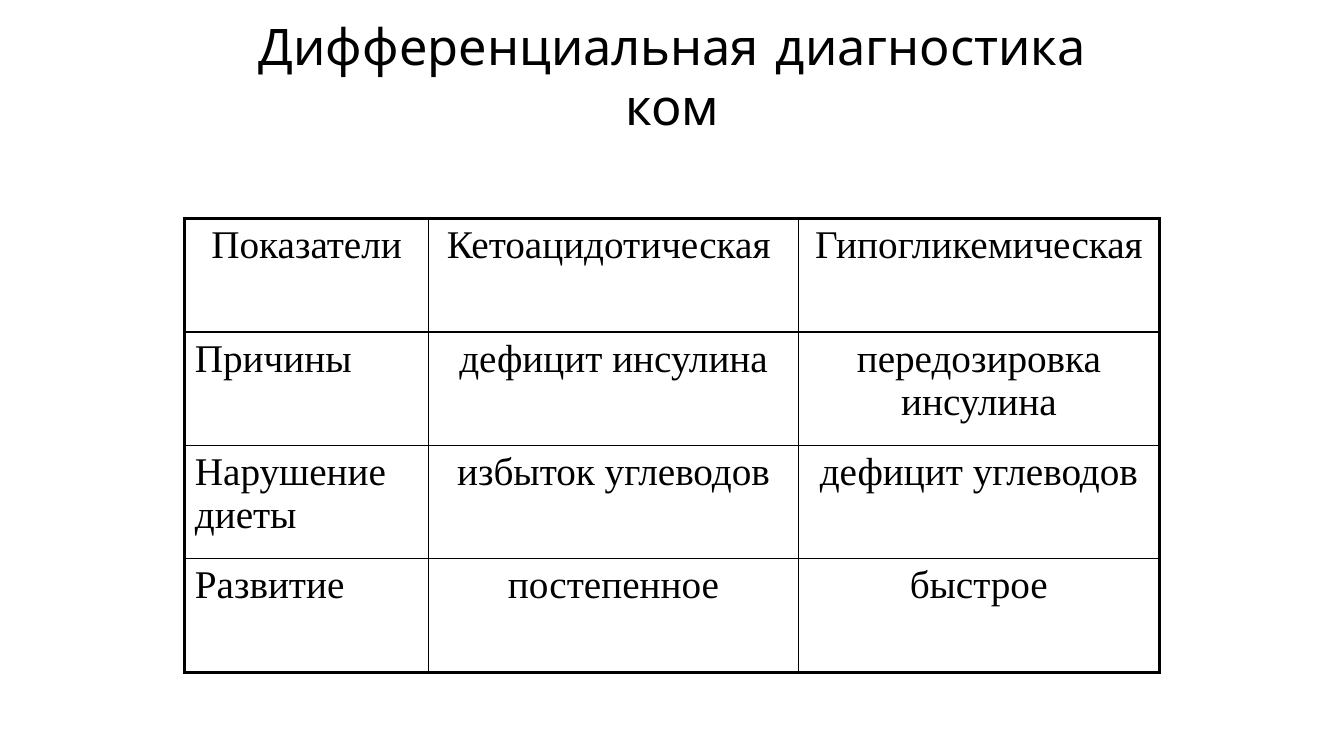
"""Build a slide with a table comparing two kinds of diabetic coma."""
from dataclasses import dataclass

import lxml.etree
import pptx
import pptx.dml.color
import pptx.enum.text
import pptx.oxml.ns
import pptx.util

COLOURS = {"ink": "000000"}
SLIDE_WIDTH = pptx.util.Inches(13.33)
SLIDE_HEIGHT = pptx.util.Inches(7.5)
THICK, THIN = 2.25, 1
CENTER = pptx.enum.text.PP_ALIGN.CENTER
LEFT = pptx.enum.text.PP_ALIGN.LEFT


@dataclass(frozen=True)
class Area:
    """A rectangle in percent of the slide's size."""
    left: float
    top: float
    width: float
    height: float

    def lengths(self) -> tuple[int, int, int, int]:
        """Return left, top, width and height as lengths."""
        return (int(SLIDE_WIDTH * self.left / 100), int(SLIDE_HEIGHT * self.top / 100),
                int(SLIDE_WIDTH * self.width / 100), int(SLIDE_HEIGHT * self.height / 100))


@dataclass(frozen=True)
class Row:
    """One row of the comparison."""
    indicator: str
    ketoacidotic: str
    hypoglycemic: str


TITLE = "Дифференциальная диагностика ком"
TITLE_AREA = Area(14.4, 3.33, 71.27, 13.33)
TABLE_AREA = Area(13.75, 28.93, 72.5, 60)
COLUMN_SHARES = (0.25, 0.38, 0.37)
ROWS = (
    Row("Показатели", "Кетоацидотическая ", "Гипогликемическая"),
    Row("Причины", "дефицит инсулина", "передозировка инсулина"),
    Row("Нарушение диеты", "избыток углеводов", "дефицит углеводов"),
    Row("Развитие", "постепенное", "быстрое"),
)


def style_paragraph(para, font_name: str, size: float, alignment) -> None:
    """Set the font and alignment of a paragraph."""
    para.alignment = alignment
    para.font.name = font_name
    para.font.size = pptx.util.Pt(size)
    para.font.color.rgb = pptx.dml.color.RGBColor.from_string(COLOURS["ink"])


def add_border(cell, side: str, width: float) -> None:
    """Draw one side of a cell."""
    qn = pptx.oxml.ns.qn
    line = lxml.etree.SubElement(cell._tc.get_or_add_tcPr(), qn(f"a:ln{side}"),
                                 w=str(pptx.util.Pt(width)))
    fill = lxml.etree.SubElement(line, qn("a:solidFill"))
    lxml.etree.SubElement(fill, qn("a:srgbClr"), val=COLOURS["ink"])


def add_relative_space(para, percent: int) -> None:
    """Set the space before a paragraph in percent of its line."""
    qn = pptx.oxml.ns.qn
    space = lxml.etree.Element(qn("a:spcBef"))
    lxml.etree.SubElement(space, qn("a:spcPct"), val=str(percent * 1000))
    para._p.get_or_add_pPr().insert(0, space)


def add_title(page) -> None:
    """Place and format the title."""
    box = page.shapes.title
    box.left, box.top, box.width, box.height = TITLE_AREA.lengths()
    frame = box.text_frame
    frame.text = TITLE
    frame.word_wrap = True
    frame.auto_size = pptx.enum.text.MSO_AUTO_SIZE.NONE
    frame.vertical_anchor = pptx.enum.text.MSO_ANCHOR.MIDDLE
    style_paragraph(frame.paragraphs[0], "Comic Neue", 36, CENTER)


def add_comparison(page) -> None:
    """Add the table with thick outer and thin inner borders."""
    last_row, last_column = len(ROWS) - 1, len(COLUMN_SHARES) - 1
    area = TABLE_AREA.lengths()
    table = page.shapes.add_table(len(ROWS), len(COLUMN_SHARES), *area).table
    table.first_row = table.horz_banding = False
    for column, share in zip(table.columns, COLUMN_SHARES):
        column.width = int(area[2] * share)
    for r, row in enumerate(ROWS):
        for c, text in enumerate((row.indicator, row.ketoacidotic, row.hypoglycemic)):
            cell = table.cell(r, c)
            cell.text = text
            para = cell.text_frame.paragraphs[0]
            style_paragraph(para, "Times New Roman", 28, LEFT if r and not c else CENTER)
            add_relative_space(para, 20)
            outer = {"L": c == 0, "R": c == last_column, "T": r == 0, "B": r == last_row}
            for side, is_outer in outer.items():
                add_border(cell, side, THICK if is_outer else THIN)
            cell.fill.background()


def main() -> None:
    """Create and save the deck."""
    deck = pptx.Presentation()
    deck.slide_width, deck.slide_height = SLIDE_WIDTH, SLIDE_HEIGHT
    page = deck.slides.add_slide(deck.slide_layouts.get_by_name("Title Only"))
    add_title(page)
    add_comparison(page)
    deck.save("out.pptx")


if __name__ == "__main__":
    main()
